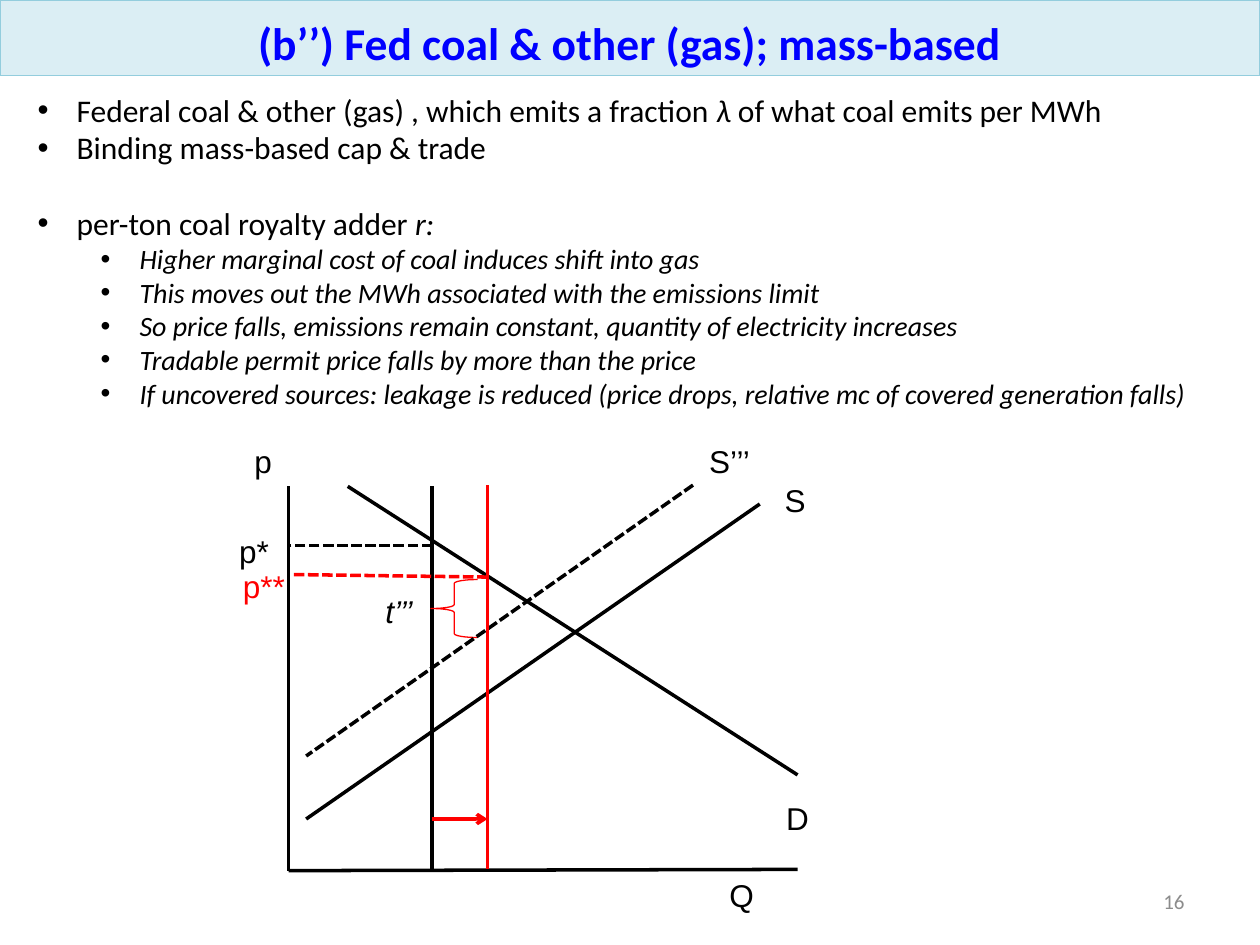
from dataclasses import dataclass

from lxml import etree
from pptx import Presentation
from pptx import util as u
from pptx.dml.color import RGBColor
from pptx.enum import dml, shapes, text
from pptx.oxml.ns import qn


@dataclass(frozen=True)
class Theme:
    black: str = "000000"
    red: str = "FF0000"
    blue: str = "0000FF"
    grey: str = "8C8C8C"
    band: str = "DBEEF4"
    band_edge: str = "93CDDD"
    body_font: str = "Calibri"
    plot_font: str = "Arial"
    title_size: int = 26
    body_size: int = 18
    sub_size: int = 16
    number_size: int = 12
    line_width: float = 2
    brace_width: float = 0.75


THEME = Theme()
WIDTH, HEIGHT = 10, 7.5
ORIGIN_X, ORIGIN_Y = 2.29, 6.91
AXIS_Q, AXIS_P = 4.04, 3.05
CAP, NEW_CAP = 1.14, 1.58
PRICE, NEW_PRICE = 2.58, 2.33
LABEL_HEIGHT = 0.4

# (level, spans); a span is (words, italic)
BULLETS = [
    (0, [("Federal coal & other (gas) , which emits a fraction ", False),
         ("λ ", True), ("of what coal emits per MWh", False)]),
    (0, [("Binding mass-based cap & trade", False)]),
    (0, [("per-ton coal royalty adder ", False), ("r:", True)]),
    (1, [("Higher marginal cost of coal induces shift into gas", True)]),
    (1, [("This moves out the MWh associated with the emissions limit", True)]),
    (1, [("So price falls, emissions remain constant, quantity of electricity increases", True)]),
    (1, [("Tradable permit price falls by more than the price", True)]),
    (1, [("If uncovered sources: leakage is reduced "
          "(price drops, relative mc of covered generation falls)", True)]),
]
ROYALTY_BULLET = 2


def color(value):
    return RGBColor.from_string(value)


def plot_point(quantity, price):
    """Slide position of a point measured in inches from the plot's origin."""
    return u.Inches(ORIGIN_X + quantity), u.Inches(ORIGIN_Y - price)


def add_span(para, words, *, size, font=THEME.body_font, ink=THEME.black,
             bold=False, italic=False):
    span = para.add_run()
    span.text = words
    span.font.name = font
    span.font.size = u.Pt(size)
    span.font.bold = bold
    span.font.italic = italic
    span.font.color.rgb = color(ink)


def add_box(page, left, top, width, height, wrap=True):
    box = page.shapes.add_textbox(left, top, width, height)
    box.text_frame.word_wrap = wrap
    return box.text_frame


def add_bullet(para, level):
    para.level = level
    properties = para._p.get_or_add_pPr()
    properties.set("marL", str(u.Inches(0.31 + 0.5 * level)))
    properties.set("indent", str(-u.Inches(0.31)))
    etree.SubElement(properties, qn("a:buFont"), typeface=THEME.plot_font)
    etree.SubElement(properties, qn("a:buChar"), char="•")


def add_title(page, words):
    title = page.shapes.title
    title.left, title.top = 0, 0
    title.width, title.height = u.Inches(WIDTH), u.Inches(0.08 * HEIGHT)
    title.fill.solid()
    title.fill.fore_color.rgb = color(THEME.band)
    title.line.color.rgb = color(THEME.band_edge)
    title.line.width = 0
    frame = title.text_frame
    frame.vertical_anchor = text.MSO_ANCHOR.BOTTOM
    para = frame.paragraphs[0]
    para.alignment = text.PP_ALIGN.CENTER
    add_span(para, words, size=THEME.title_size, ink=THEME.blue, bold=True)


def add_bullets(page):
    frame = add_box(page, u.Inches(0.2), u.Inches(0.67), u.Inches(9.58), u.Inches(2.66))
    for index, (level, spans) in enumerate(BULLETS):
        para = frame.add_paragraph() if index else frame.paragraphs[0]
        if index == ROYALTY_BULLET:
            para.space_before = u.Pt(1.2 * THEME.body_size)
        add_bullet(para, level)
        size = THEME.sub_size if level else THEME.body_size
        for words, italic in spans:
            add_span(para, words, size=size, italic=italic)


def add_page_number(page, number):
    frame = add_box(page, u.Inches(7.17), u.Inches(6.95), u.Inches(2.33), u.Inches(0.4))
    frame.vertical_anchor = text.MSO_ANCHOR.MIDDLE
    para = frame.paragraphs[0]
    para.alignment = text.PP_ALIGN.RIGHT
    add_span(para, number, size=THEME.number_size, ink=THEME.grey)


def add_line(page, start, end, ink=THEME.black, dashed=False, arrow=False):
    line = page.shapes.add_connector(
        shapes.MSO_CONNECTOR.STRAIGHT, *plot_point(*start), *plot_point(*end))
    line.line.color.rgb = color(ink)
    line.line.width = u.Pt(THEME.line_width)
    if dashed:
        line.line.dash_style = dml.MSO_LINE.SQUARE_DOT
    if arrow:
        etree.SubElement(line.line._get_or_add_ln(), qn("a:tailEnd"), type="arrow")
    etree.SubElement(line._element.spPr, qn("a:effectLst"))


def add_label(page, words, quantity, price, width, ink=THEME.black, italic=False):
    frame = add_box(page, *plot_point(quantity, price), u.Inches(width),
                    u.Inches(LABEL_HEIGHT), wrap=False)
    add_span(frame.paragraphs[0], words, size=THEME.body_size,
             font=THEME.plot_font, ink=ink, italic=italic)


def add_brace(page, quantity, price, width, height):
    brace = page.shapes.add_shape(
        shapes.MSO_SHAPE.LEFT_BRACE, *plot_point(quantity, price),
        u.Inches(width), u.Inches(height))
    brace.shadow.inherit = False
    brace.fill.background()
    brace.line.color.rgb = color(THEME.red)
    brace.line.width = u.Pt(THEME.brace_width)


def add_market_plot(page):
    add_line(page, (0, AXIS_P), (0, 0))
    add_line(page, (AXIS_Q, 0.01), (0, 0))
    add_line(page, (3.74, 2.91), (0.14, 0.41))  # supply
    add_line(page, (AXIS_Q, 0.76), (0.47, AXIS_P))  # demand
    add_line(page, (CAP, AXIS_P), (CAP, 0))
    add_brace(page, CAP - 0.01, 2.31, 0.37, 0.46)
    add_line(page, (3.21, 3.06), (0.14, 0.91), dashed=True)  # shifted supply
    add_line(page, (NEW_CAP, 3.06), (NEW_CAP, 0.01), ink=THEME.red)
    add_line(page, (CAP, 0.41), (NEW_CAP, 0.41), ink=THEME.red, arrow=True)
    add_line(page, (CAP, PRICE), (0, PRICE), dashed=True)
    add_line(page, (NEW_CAP, NEW_PRICE), (0.04, 2.35), ink=THEME.red, dashed=True)

    add_label(page, "p", -0.37, 3.45, 0.34)
    add_label(page, "p*", -0.49, 2.74, 0.44)
    add_label(page, "p**", -0.46, 2.46, 0.54, ink=THEME.red)
    add_label(page, "t’’’", 0.67, 2.26, 0.45, italic=True)
    add_label(page, "S’’’", 3.24, 3.45, 0.53)
    add_label(page, "S", 3.84, 3.14, 0.37)
    add_label(page, "D", 3.85, 0.62, 0.38)
    add_label(page, "Q", 3.4, 0.01, 0.4)


def main():
    deck = Presentation()
    deck.slide_width, deck.slide_height = u.Inches(WIDTH), u.Inches(HEIGHT)
    page = deck.slides.add_slide(deck.slide_layouts[5])
    add_title(page, "(b’’) Fed coal & other (gas); mass-based")
    add_bullets(page)
    add_market_plot(page)
    add_page_number(page, "16")
    deck.save("out.pptx")


if __name__ == "__main__":
    main()
